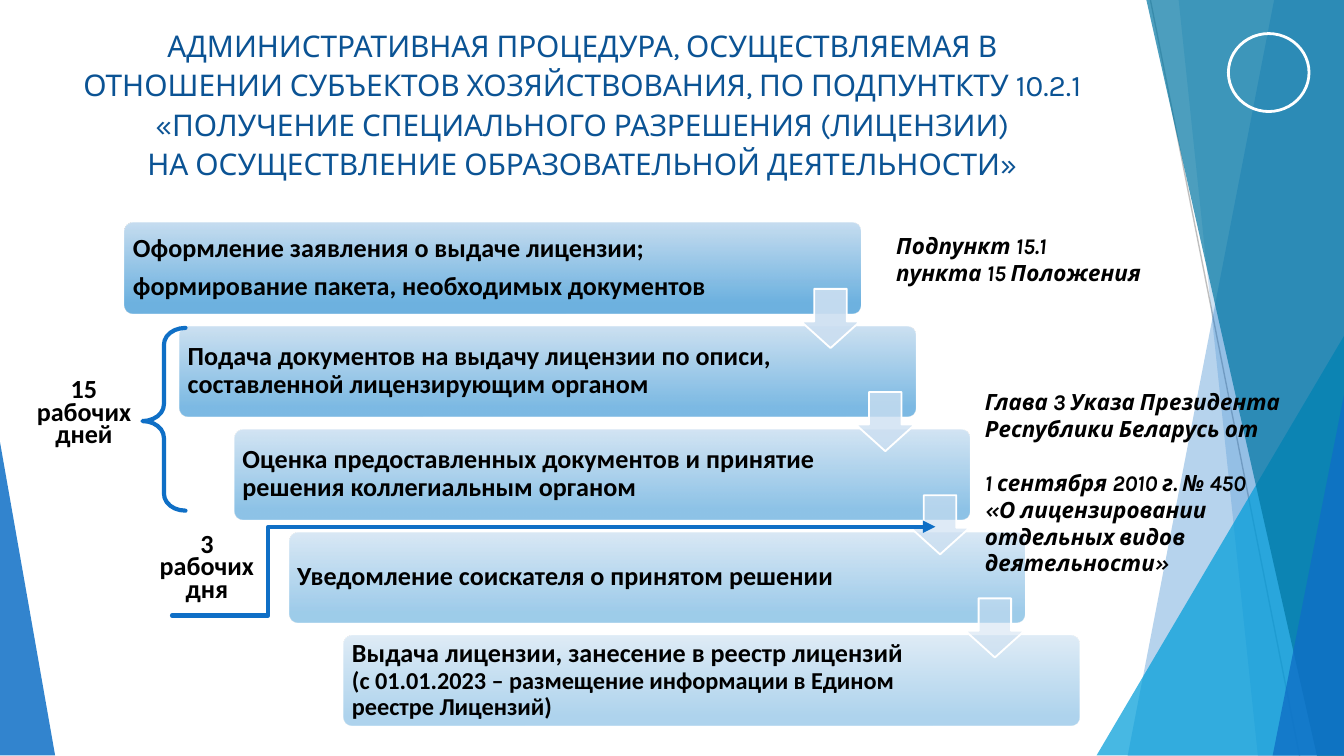
from lxml.etree import SubElement
from pptx import Presentation
from pptx.dml.color import RGBColor
from pptx.enum.shapes import MSO_CONNECTOR, MSO_SHAPE
from pptx.enum.text import MSO_ANCHOR, MSO_AUTO_SIZE, PP_ALIGN
from pptx.oxml.ns import qn
from pptx.util import Inches, Pt

BLUE = RGBColor(0x0F, 0x6F, 0xC6)
CYAN = RGBColor(0x00, 0x9D, 0xD9)
TEAL = RGBColor(0x00, 0x76, 0xA3)
TITLE_BLUE = RGBColor(0x0B, 0x53, 0x94)
STEP_LIGHT = RGBColor(0xC1, 0xDA, 0xEF)
STEP_DARK = RGBColor(0x5E, 0xAA, 0xDD)
ARROW_BLUE = RGBColor(0xCC, 0xDF, 0xF1)
GREY = RGBColor(0xBF, 0xBF, 0xBF)
WHITE = RGBColor(0xFF, 0xFF, 0xFF)
BLACK = RGBColor(0, 0, 0)

WIDTH = 10
HEIGHT = WIDTH * 9 / 16

TITLE = [
    "АДМИНИСТРАТИВНАЯ ПРОЦЕДУРА, ОСУЩЕСТВЛЯЕМАЯ В ОТНОШЕНИИ СУБЪЕКТОВ "
    "ХОЗЯЙСТВОВАНИЯ, ПО ПОДПУНТКТУ 10.2.1",
    "«ПОЛУЧЕНИЕ СПЕЦИАЛЬНОГО РАЗРЕШЕНИЯ (ЛИЦЕНЗИИ)",
    "НА ОСУЩЕСТВЛЕНИЕ ОБРАЗОВАТЕЛЬНОЙ ДЕЯТЕЛЬНОСТИ»",
]
STEPS = [
    ["Оформление заявления о выдаче лицензии;",
     "формирование пакета, необходимых документов"],
    ["Подача документов на выдачу лицензии по описи, "
     "составленной лицензирующим органом"],
    ["Оценка предоставленных документов и принятие решения "
     "коллегиальным органом"],
    ["Уведомление соискателя о принятом решении"],
    ["Выдача лицензии, занесение в реестр лицензий",
     "(с 01.01.2023 – размещение информации в Едином реестре Лицензий)"],
]
ARROW_ALPHAS = [90, 77, 63, 50]
RULE_NOTE = ["Подпункт 15.1", "пункта 15 Положения"]
DECREE_NOTE = [
    "Глава 3 Указа Президента Республики Беларусь от",
    "1 сентября 2010 г. № 450",
    "«О лицензировании отдельных видов деятельности»",
]
TERMS = [("15 рабочих дней", (0.09, 2.79, 1.07, 0.62)),
         ("3 рабочих дня", (1.06, 3.94, 0.96, 0.62))]

# Side decoration, back to front: polygon points or (box, apex), colour, opacity
TRIANGLE, POLYGON = "triangle", "polygon"
DECOR = [
    (POLYGON, [(9.48, 0), (10, 0), (10, HEIGHT), (8.39, HEIGHT)], BLUE, 30),
    (POLYGON, [(8.77, 0), (10, 0), (10, HEIGHT), (9.36, HEIGHT)], BLUE, 20),
    (TRIANGLE, ((8.16, 2.5, 1.84, 3.12), 1), CYAN, 72),
    (POLYGON, [(8.53, 0), (10, 0), (10, HEIGHT), (9.8, HEIGHT)], TEAL, 70),
    (TRIANGLE, ((9.47, 2.94, 0.53, 2.68), 1), BLUE, 80),
    (TRIANGLE, ((0, 3.29, 0.41, 2.33), 0), BLUE, 85),
]

TITLE_FONT = {"name": "Karla", "size": Pt(16), "bold": False}
STEP_FONT = {"name": "Calibri", "size": Pt(14), "bold": True}
NOTE_FONT = {"name": "Karla", "size": Pt(12), "bold": True, "italic": True}

# Staircase of steps, from the first box to the last
STEP_W, STEP_H = 5.47, 0.67
FIRST_LEFT, FIRST_TOP = 0.93, 1.66
STEP_DX = (2.56 - FIRST_LEFT) / (len(STEPS) - 1)
STEP_DY = (4.73 - FIRST_TOP) / (len(STEPS) - 1)
ARROW_SIZE, ARROW_DROP = 0.44, 0.49


def set_alpha(shape, percent):
    """Give every fill colour of the shape the same opacity."""
    for fill in shape._element.spPr.findall(qn("a:solidFill")) + \
            shape._element.spPr.findall(qn("a:gradFill")):
        for color in fill.iter(qn("a:srgbClr")):
            SubElement(color, qn("a:alpha"), val=str(percent * 1000))


def set_line(shape, color, width):
    shape.line.color.rgb = color
    shape.line.width = Pt(width)


def add_shape(s, kind, box, adjustments=(), fill=None, alpha=100):
    sp = s.shapes.add_shape(kind, *map(Inches, box))
    sp.shadow.inherit = False
    for i, value in enumerate(adjustments):
        sp.adjustments[i] = value
    if fill is None:
        sp.fill.background()
    else:
        sp.fill.solid()
        sp.fill.fore_color.rgb = fill
        set_alpha(sp, alpha)
    sp.line.fill.background()
    return sp


def add_line(s, kind, start, end, color, width):
    line = s.shapes.add_connector(kind, *map(Inches, start + end))
    set_line(line, color, width)
    SubElement(line._element.spPr, qn("a:effectLst"))
    return line


def fill_text(tf, lines, font, color=BLACK, **paragraph_format):
    tf.word_wrap = True
    for i, line in enumerate(lines):
        p = tf.paragraphs[0] if i == 0 else tf.add_paragraph()
        for name, value in paragraph_format.items():
            setattr(p, name, value)
        r = p.add_run()
        r.text = line
        for name, value in font.items():
            setattr(r.font, name, value)
        r.font.color.rgb = color


def add_text(s, box, lines, font, **paragraph_format):
    tf = s.shapes.add_textbox(*map(Inches, box)).text_frame
    fill_text(tf, lines, font, **paragraph_format)
    return tf


def add_decor(s):
    add_line(s, MSO_CONNECTOR.STRAIGHT, (8.56, 0), (9.67, HEIGHT), GREY, 0.75)
    for kind, geometry, color, alpha in DECOR:
        if kind == TRIANGLE:
            box, apex = geometry
            add_shape(s, MSO_SHAPE.ISOSCELES_TRIANGLE, box, [apex], color, alpha)
            continue
        points = [(Inches(x), Inches(y)) for x, y in geometry]
        builder = s.shapes.build_freeform(*points[0])
        builder.add_line_segments(points[1:], close=True)
        sp = builder.convert_to_shape()
        sp.shadow.inherit = False
        sp.fill.solid()
        sp.fill.fore_color.rgb = color
        set_alpha(sp, alpha)
        sp.line.fill.background()
    set_line(add_shape(s, MSO_SHAPE.OVAL, (9.14, 0.25, 0.6, 0.58)), WHITE, 1.5)


def add_title(s):
    title = s.shapes.title
    title.left, title.top, title.width, title.height = map(
        Inches, (0.43, 0.13, 7.81, 1.26))
    tf = title.text_frame
    fill_text(tf, TITLE, TITLE_FONT, TITLE_BLUE,
              alignment=PP_ALIGN.CENTER, line_spacing=1.1, space_before=Pt(0))
    tf.vertical_anchor = MSO_ANCHOR.TOP
    tf.auto_size = MSO_AUTO_SIZE.NONE


def add_step(s, i, lines):
    last = i == len(STEPS) - 1
    box = (FIRST_LEFT + i * STEP_DX, FIRST_TOP + i * STEP_DY, STEP_W, STEP_H)
    sp = add_shape(s, MSO_SHAPE.ROUNDED_RECTANGLE, box, [0.1])
    sp.fill.gradient()
    sp.fill.gradient_angle = 270
    for stop, color, position in zip(
            sp.fill.gradient_stops, (STEP_LIGHT, STEP_DARK), (0, 0.88)):
        stop.color.rgb = color
        stop.position = position
    set_alpha(sp, 90 - 10 * i)
    tf = sp.text_frame
    fill_text(tf, lines, STEP_FONT, alignment=PP_ALIGN.LEFT,
              line_spacing=0.9, space_after=Pt(0 if last else 4.9))
    tf.vertical_anchor = MSO_ANCHOR.MIDDLE
    tf.margin_left = tf.margin_top = tf.margin_bottom = Inches(0.04)
    tf.margin_right = Inches(0.89)
    if last:
        tf.paragraphs[1].runs[0].font.size = Pt(13)


def add_step_arrow(s, i, alpha):
    box = (FIRST_LEFT + STEP_W - ARROW_SIZE + i * STEP_DX,
           FIRST_TOP + ARROW_DROP + i * STEP_DY, ARROW_SIZE, ARROW_SIZE)
    sp = add_shape(s, MSO_SHAPE.DOWN_ARROW, box, [0.55, 0.45], ARROW_BLUE, alpha)
    set_line(sp, WHITE, 1)


def add_terms(s):
    brace = add_shape(s, MSO_SHAPE.LEFT_BRACE, (1.06, 2.44, 0.32, 1.36),
                      [0.39, 0.51])
    set_line(brace, BLUE, 2.25)
    elbow = add_line(s, MSO_CONNECTOR.ELBOW, (1.28, 4.58), (6.96, 3.92), BLUE, 2.25)
    guides = elbow._element.spPr.find(qn("a:prstGeom")).find(qn("a:avLst"))
    SubElement(guides, qn("a:gd"), name="adj1", fmla="val 12600")
    SubElement(elbow.line._get_or_add_ln(), qn("a:tailEnd"), type="triangle")
    for sp in (brace, elbow):
        sp.line._get_or_add_ln().set("cap", "rnd")
    for text, box in TERMS:
        add_text(s, box, [text], STEP_FONT,
                 alignment=PP_ALIGN.CENTER, line_spacing=Pt(12))


def main():
    prs = Presentation()
    prs.slide_width, prs.slide_height = Inches(WIDTH), Inches(HEIGHT)
    s = prs.slides.add_slide(prs.slide_layouts[5])
    add_decor(s)
    add_title(s)
    for i, lines in enumerate(STEPS):
        add_step(s, i, lines)
    for i, alpha in enumerate(ARROW_ALPHAS):
        add_step_arrow(s, i, alpha)
    add_text(s, (6.57, 1.68, 2.51, 0.5), RULE_NOTE, NOTE_FONT)
    decree = add_text(s, (7.23, 2.84, 2.51, 1.11), DECREE_NOTE, NOTE_FONT)
    decree.paragraphs[1].space_before = Pt(14.4)
    add_terms(s)
    prs.save("out.pptx")


if __name__ == "__main__":
    main()
